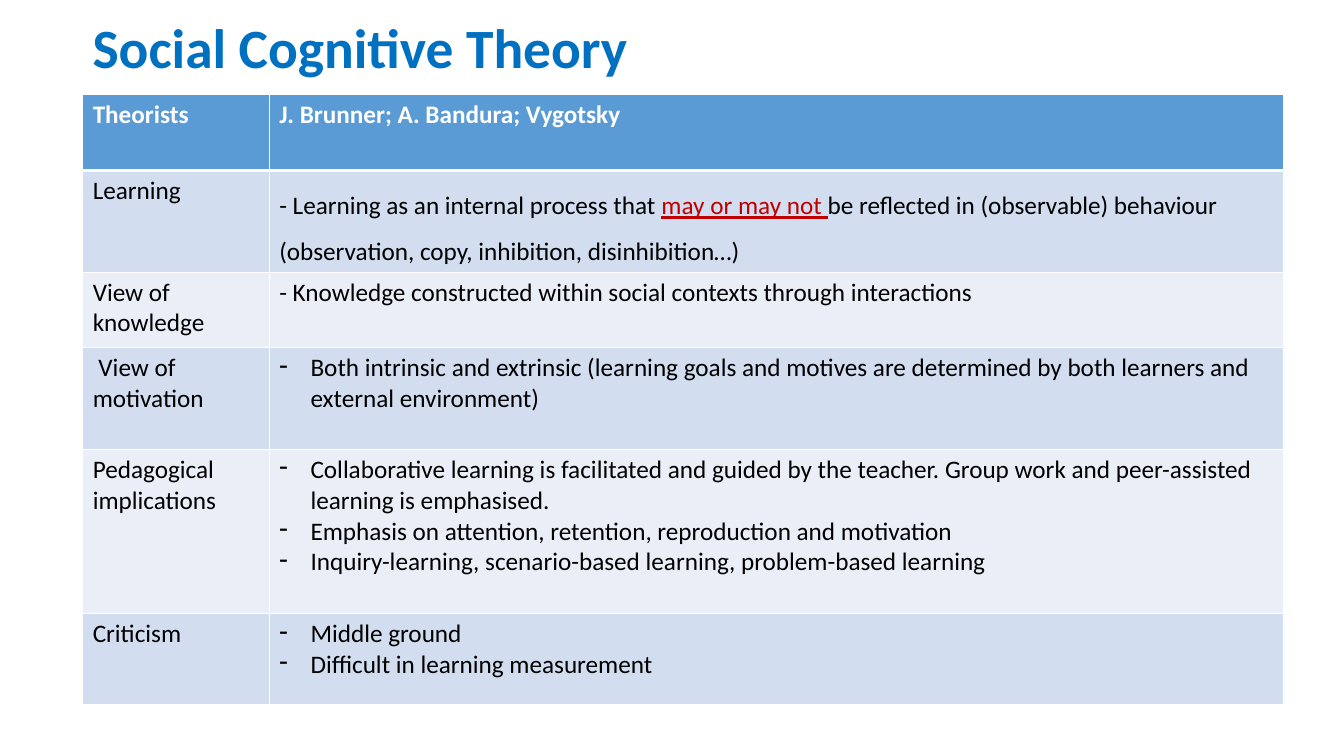
"""Build the Social Cognitive Theory summary slide."""
import pptx
import pptx.dml.color
import pptx.enum.text
import pptx.oxml
import pptx.oxml.ns
import pptx.util
from dataclasses import dataclass

Inches = pptx.util.Inches
Pt = pptx.util.Pt

TITLE = "Social Cognitive Theory"
EMPHASIS = "may or may not "
ROWS = [
    ("Theorists", ["J. Brunner; A. Bandura; Vygotsky"], 0.75),
    ("Learning", [
        "- Learning as an internal process that may or may not be reflected in (observable) "
        "behaviour (observation, copy, inhibition, disinhibition…)"], 1.01),
    ("View of knowledge", [
        "- Knowledge constructed within social contexts through interactions"], 0.75),
    (" View of motivation", [
        "Both intrinsic and extrinsic (learning goals and motives are determined by both "
        "learners and external environment)"], 1.01),
    ("Pedagogical implications", [
        "Collaborative learning is facilitated and guided by the teacher. Group work and "
        "peer-assisted learning is emphasised.",
        "Emphasis on attention, retention, reproduction and motivation",
        "Inquiry-learning, scenario-based learning, problem-based learning"], 1.63),
    ("Criticism", ["Middle ground", "Difficult in learning measurement"], 0.9),
]
FIRST_BULLETED_ROW = 3
COLUMN_WIDTHS = (1.85, 10.06)
LEFT, TABLE_TOP = 0.82, 0.94


@dataclass(frozen=True)
class Theme:
    """Colours and type sizes of the slide."""
    font: str = "Calibri"
    title_size: float = 39.6
    body_size: float = 18
    title: str = "0070C0"
    header: str = "5B9BD5"
    bands: tuple = ("EAEFF7", "D2DEEF")
    light: str = "FFFFFF"
    dark: str = "000000"
    emphasis: str = "C00000"


THEME = Theme()


def rgb(value):
    """Return a colour object for a hex value."""
    return pptx.dml.color.RGBColor.from_string(value)


def style_font(font, size, color, bold):
    """Apply the slide typeface with the given look."""
    font.name, font.size, font.bold = THEME.font, Pt(size), bold
    font.color.rgb = rgb(color)


def add_bullet(paragraph):
    """Give a paragraph a hanging dash."""
    properties = paragraph._p.get_or_add_pPr()
    properties.set("marL", str(Inches(0.31)))
    properties.set("indent", str(-Inches(0.31)))
    bullet = pptx.oxml.parse_xml(
        f'<a:buChar {pptx.oxml.ns.nsdecls("a")} char="-"/>')
    properties.append(bullet)


def set_borders(cell, widths):
    """Draw light borders of the given point widths around a cell."""
    properties = cell._tc.get_or_add_tcPr()
    for position, (side, width) in enumerate(widths.items()):
        properties.insert(position, pptx.oxml.parse_xml(
            f'<a:ln{side} {pptx.oxml.ns.nsdecls("a")} w="{Pt(width)}"><a:solidFill>'
            f'<a:srgbClr val="{THEME.light}"/></a:solidFill></a:ln{side}>'))


def add_text(paragraph, text):
    """Write text, underlining and colouring the emphasised words."""
    before, emphasis, after = text.partition(EMPHASIS)
    for part in filter(None, (before, emphasis, after)):
        run = paragraph.add_run()
        run.text = part
        if part == EMPHASIS:
            run.font.underline = True
            run.font.color.rgb = rgb(THEME.emphasis)
            paragraph.line_spacing = 1.5


def fill_cell(cell, lines, row, bulleted):
    """Write and style one table cell."""
    header = row == 0
    cell.fill.solid()
    cell.fill.fore_color.rgb = rgb(THEME.header if header else THEME.bands[row % 2])
    set_borders(cell, {"L": 1, "R": 1, "T": 3 if row == 1 else 1, "B": 3 if header else 1})
    for index, line in enumerate(lines):
        frame = cell.text_frame
        paragraph = frame.add_paragraph() if index else frame.paragraphs[0]
        if bulleted:
            add_bullet(paragraph)
        style_font(paragraph.font, THEME.body_size,
                   THEME.light if header else THEME.dark, header)
        add_text(paragraph, line)


def add_title(slide):
    """Place the slide title."""
    box = slide.shapes.add_textbox(Inches(LEFT), Inches(0.2), Inches(11.5), Inches(0.61))
    frame = box.text_frame
    frame.word_wrap = True
    frame.vertical_anchor = pptx.enum.text.MSO_ANCHOR.MIDDLE
    paragraph = frame.paragraphs[0]
    paragraph.text = TITLE
    paragraph.line_spacing = 0.9
    style_font(paragraph.font, THEME.title_size, THEME.title, True)


def add_theory_table(slide):
    """Place the table of theory aspects."""
    heights = [height for _, _, height in ROWS]
    table = slide.shapes.add_table(
        len(ROWS), len(COLUMN_WIDTHS), Inches(LEFT), Inches(TABLE_TOP),
        Inches(sum(COLUMN_WIDTHS)), Inches(sum(heights))).table
    for column, width in zip(table.columns, COLUMN_WIDTHS):
        column.width = Inches(width)
    for row, (aspect, lines, height) in enumerate(ROWS):
        table.rows[row].height = Inches(height)
        fill_cell(table.cell(row, 0), [aspect], row, False)
        fill_cell(table.cell(row, 1), lines, row, row >= FIRST_BULLETED_ROW)


def main():
    """Create and save the presentation."""
    presentation = pptx.Presentation()
    presentation.slide_width, presentation.slide_height = Inches(13.33), Inches(7.5)
    slide = presentation.slides.add_slide(presentation.slide_layouts[6])
    add_title(slide)
    add_theory_table(slide)
    presentation.save("out.pptx")


if __name__ == "__main__":
    main()
